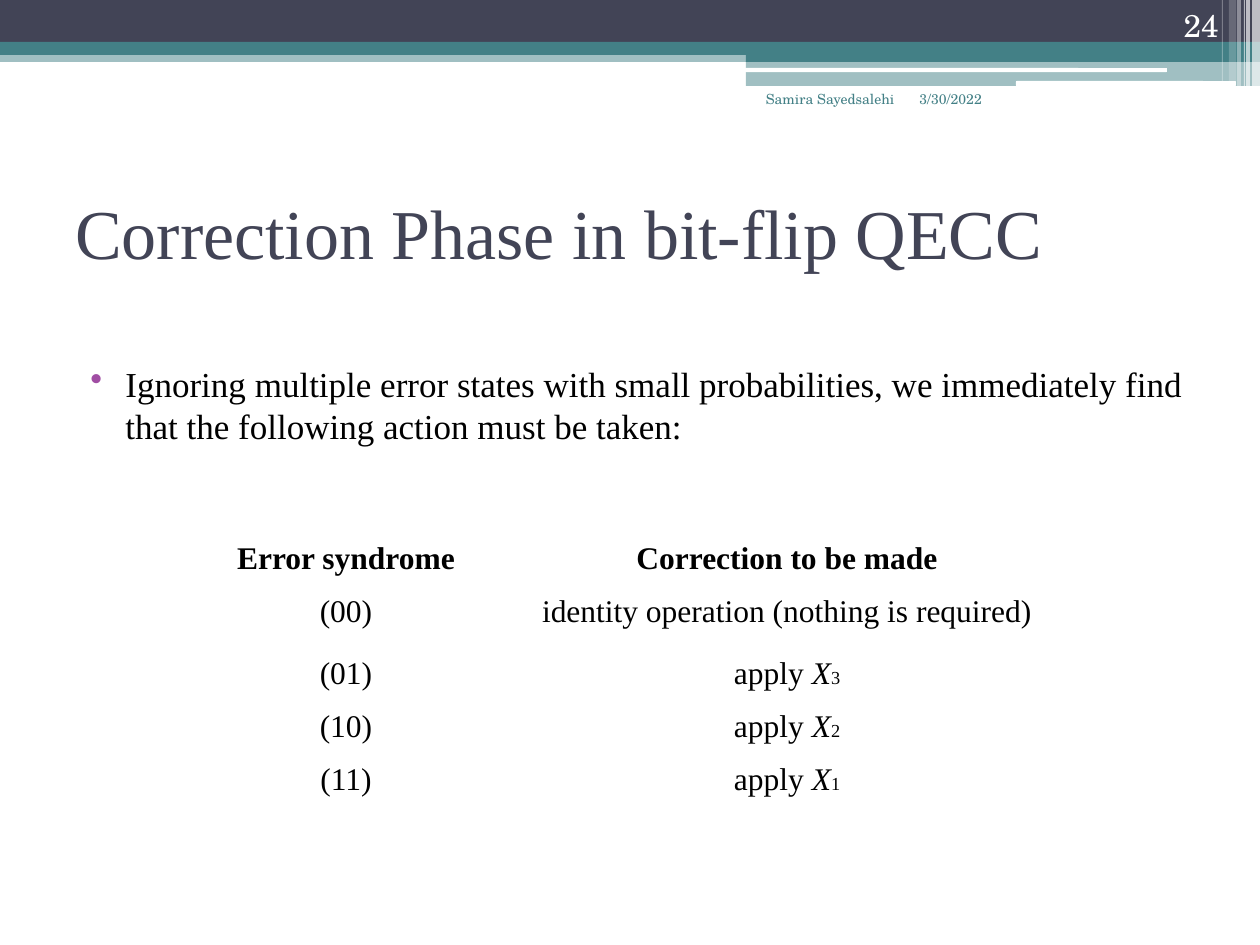
"""Build the slide on the correction phase of the bit-flip code."""
from lxml import etree
from pptx import Presentation
from pptx.dml.color import RGBColor
from pptx.enum.shapes import MSO_SHAPE
from pptx.enum.text import MSO_ANCHOR, PP_ALIGN
from pptx.oxml.ns import qn
from pptx.util import Emu, Pt

SCALE = 914400 / 126
RECTANGLE, ROUNDED = MSO_SHAPE.RECTANGLE, MSO_SHAPE.ROUNDED_RECTANGLE
LEFT, CENTER, RIGHT = PP_ALIGN.LEFT, PP_ALIGN.CENTER, PP_ALIGN.RIGHT
TOP, MIDDLE, BOTTOM = MSO_ANCHOR.TOP, MSO_ANCHOR.MIDDLE, MSO_ANCHOR.BOTTOM
SERIF, SCHOOL = "Times New Roman", "TeX Gyre Schola"
COLORS = {"navy": "424456", "teal": "438086", "white": "FFFFFF",
          "black": "000000", "purple": "A04DA3"}


def px(value):
    return Emu(round(value * SCALE))


def format_runs(paragraph, size, font, color, alignment):
    paragraph.alignment = alignment
    for run in paragraph.runs:
        run.font.size = Pt(size)
        run.font.name = font
        run.font.color.rgb = RGBColor.from_string(COLORS[color])


presentation = Presentation()
presentation.slide_width, presentation.slide_height = px(1260), px(945)
slide = presentation.slides.add_slide(presentation.slide_layouts[6])

bands = [
    (RECTANGLE, 0, 50, 1260, 12, "teal", 50),
    (RECTANGLE, 0, 0, 1260, 43, "navy", 100),
    (RECTANGLE, 0, 42, 1260, 13, "teal", 100),
    (RECTANGLE, 746, 49, 514, 13, "teal", 100),
    (RECTANGLE, 746, 61, 514, 25, "teal", 50),
    (ROUNDED, 745, 68, 422, 4, "white", 100),
    (ROUNDED, 1016, 81, 220, 5, "white", 100),
    (RECTANGLE, 1252, 0, 8, 86, "white", 65),
    (RECTANGLE, 1246, 0, 4, 86, "white", 65),
    (RECTANGLE, 1244, 0, 1, 86, "white", 60),
    (RECTANGLE, 1237, 0, 4, 86, "white", 40),
    (RECTANGLE, 1229, 0, 7, 81, "white", 20),
    (RECTANGLE, 1222, 0, 1, 81, "white", 30),
]
for kind, left, top, width, height, color, opacity in bands:
    shape = slide.shapes.add_shape(kind, px(left), px(top), px(width), px(height))
    shape.shadow.inherit = False
    shape.line.fill.background()
    shape.fill.solid()
    shape.fill.fore_color.rgb = RGBColor.from_string(COLORS[color])
    if opacity < 100:
        color_element = shape.fill._xPr.find(qn("a:solidFill"))[0]
        etree.SubElement(color_element, qn("a:alpha"), val=str(opacity * 1000))

texts = [
    ("Correction Phase in bit-flip QECC", 63, 158, 1134, 147, 40, SERIF, "navy", LEFT, MIDDLE),
    ("Ignoring multiple error states with small probabilities, we immediately find "
     "that the following action must be taken:",
     63, 356, 1134, 120, 20, SERIF, "black", LEFT, TOP),
    ("Samira Sayedsalehi", 725, 84, 182, 63, 8, SCHOOL, "teal", RIGHT, TOP),
    ("24", 1126, 0, 105, 50, 18, SCHOOL, "white", RIGHT, BOTTOM),
    ("3/30/2022", 907, 84, 132, 63, 8, SCHOOL, "teal", LEFT, TOP),
]
for text, left, top, width, height, size, font, color, alignment, anchor in texts:
    box = slide.shapes.add_textbox(px(left), px(top), px(width), px(height))
    box.text_frame.word_wrap = True
    box.text_frame.vertical_anchor = anchor
    box.text_frame.text = text
    paragraph = box.text_frame.paragraphs[0]
    format_runs(paragraph, size, font, color, alignment)
    if text.startswith("Ignoring"):
        paragraph.space_before = Pt(3)
        properties = paragraph._p.get_or_add_pPr()
        properties.set("marL", str(px(50)))
        properties.set("indent", str(px(-35)))
        bullet_color = etree.SubElement(properties, qn("a:buClr"))
        etree.SubElement(bullet_color, qn("a:srgbClr"), val=COLORS["purple"])
        etree.SubElement(properties, qn("a:buChar"), char="•")

rows = [
    ("Error syndrome", ["Correction to be made"]),
    ("(00)", ["identity operation (nothing is required)"]),
    ("(01)", ["apply ", "X", "3"]),
    ("(10)", ["apply ", "X", "2"]),
    ("(11)", ["apply ", "X", "1"]),
]
row_heights = [53, 62, 53, 53, 53]
table = slide.shapes.add_table(len(rows), 2, px(199), px(535), px(882), px(sum(row_heights))).table
table.first_row = table.horz_banding = False
for column, width in zip(table.columns, (294, 588)):
    column.width = px(width)
for row_index, (syndrome, action) in enumerate(rows):
    table.rows[row_index].height = px(row_heights[row_index])
    for column_index, parts in enumerate(([syndrome], action)):
        cell = table.cell(row_index, column_index)
        cell.fill.background()
        paragraph = cell.text_frame.paragraphs[0]
        for part in parts:
            paragraph.add_run().text = part
        format_runs(paragraph, 18, SERIF, "black", CENTER)
        for run in paragraph.runs:
            run.font.bold = row_index == 0
        if len(parts) == 3:
            paragraph.runs[1].font.italic = True
            paragraph.runs[2].font.size = Pt(10.5)

presentation.save("out.pptx")
